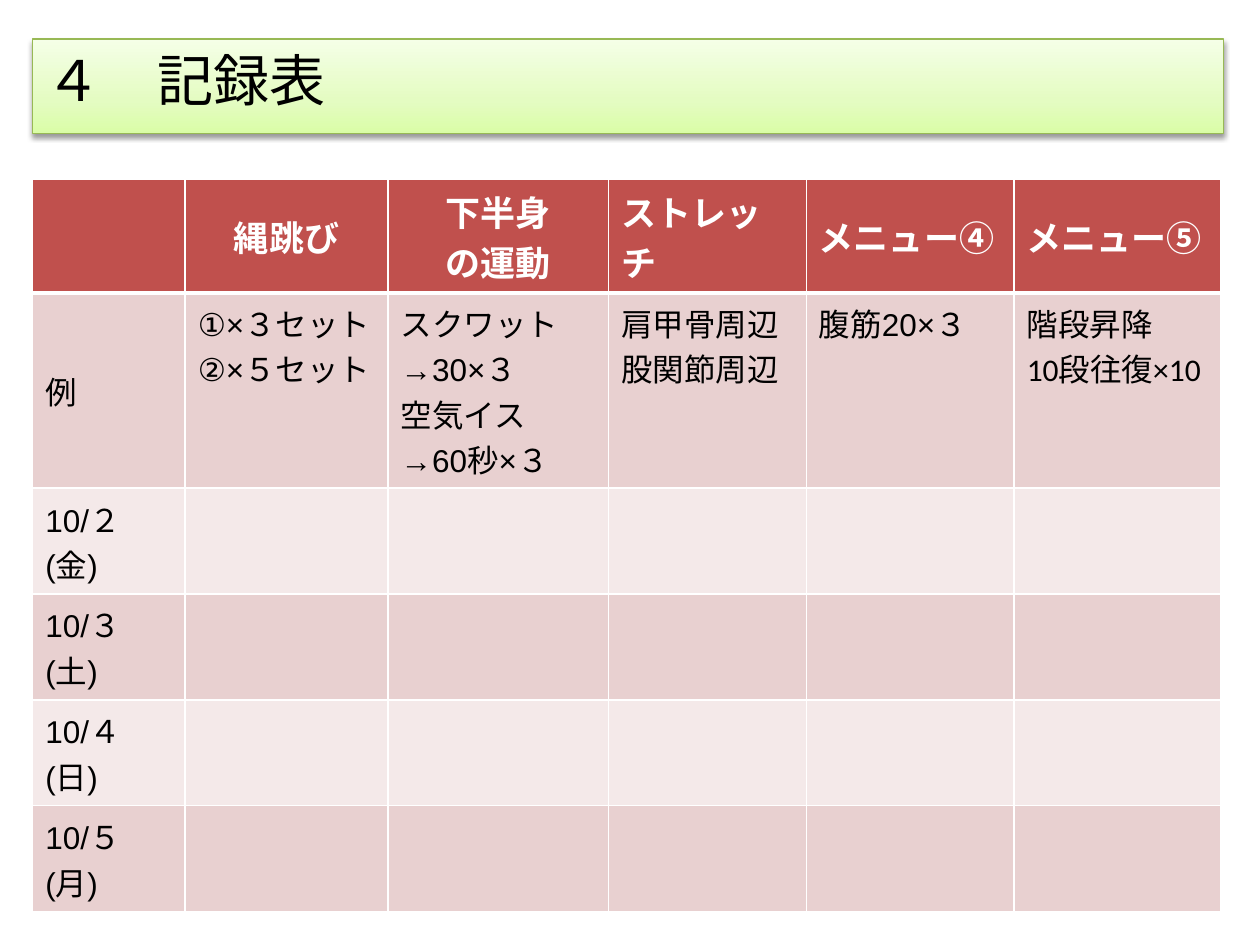
from lxml import etree
from pptx import Presentation
from pptx.dml.color import RGBColor
from pptx.enum.lang import MSO_LANGUAGE_ID
from pptx.enum.text import MSO_ANCHOR, MSO_AUTO_SIZE, PP_ALIGN
from pptx.oxml import parse_xml
from pptx.oxml.ns import nsdecls, qn
from pptx.util import Inches, Pt

JAPANESE = MSO_LANGUAGE_ID.JAPANESE
TOP, MIDDLE = MSO_ANCHOR.TOP, MSO_ANCHOR.MIDDLE
LEFT, CENTER = PP_ALIGN.LEFT, PP_ALIGN.CENTER
NO_AUTOFIT = MSO_AUTO_SIZE.NONE
rgb = RGBColor.from_string


def add_run(p, text, font, size, color, bold=False):
    r = p.add_run()
    r.text = text
    r.font.name, r.font.size, r.font.bold = font, Pt(size), bold
    r.font.color.rgb = rgb(color)
    r.font.language_id = JAPANESE
    return r


def add_border(cell, side, width):
    ln = etree.SubElement(cell._tc.get_or_add_tcPr(), qn("a:ln" + side), w=str(Pt(width)))
    fill = etree.SubElement(ln, qn("a:solidFill"))
    etree.SubElement(fill, qn("a:srgbClr"), val="FFFFFF")


prs = Presentation()
prs.slide_width, prs.slide_height = Inches(10), Inches(7.5)
s = prs.slides.add_slide(prs.slide_layouts[5])

# Title bar
title = s.shapes.title
title.left, title.top = Inches(0.26), Inches(0.31)
title.width, title.height = Inches(9.45), Inches(0.75)
title.line.color.rgb = rgb("98B955")
title.line.width = Pt(0.75)
tf = title.text_frame
tf.auto_size, tf.vertical_anchor, tf.word_wrap = NO_AUTOFIT, TOP, True
p = tf.paragraphs[0]
p.alignment = LEFT
r = add_run(p, "４\u3000記録表", "Noto Sans CJK JP", 32, "000000")
etree.SubElement(r.font._element, qn("a:ea"), typeface="Noto Sans CJK JP")

# Title gradient, running upwards, and soft shadow
stops = "".join(
    f'<a:gs pos="{pos * 1000}"><a:srgbClr val="{color}"/></a:gs>'
    for pos, color in [(0, "DAFDA7"), (35, "E4FCC2"), (100, "F5FFE7")])
ln = title.line._ln
ln.addprevious(parse_xml(
    f'<a:gradFill {nsdecls("a")} rotWithShape="1"><a:gsLst>{stops}</a:gsLst>'
    '<a:lin ang="16200000" scaled="0"/></a:gradFill>'))
ln.addnext(parse_xml(
    f'<a:effectLst {nsdecls("a")}><a:outerShdw blurRad="{Pt(3.1)}" dist="{Pt(1.6)}"'
    ' dir="5400000" rotWithShape="0"><a:srgbClr val="000000"><a:alpha val="38000"/>'
    '</a:srgbClr></a:outerShdw></a:effectLst>'))

# Record table: each cell is a list of paragraphs
headers = [[], ["縄跳び"], ["下半身", "の運動"], ["ストレッチ"], ["メニュー④"], ["メニュー⑤"]]
example = [["例"], ["①×３セット", "②×５セット"],
           ["スクワット", "→30×３", "空気イス", "→60秒×３"],
           ["肩甲骨周辺", "股関節周辺"], ["腹筋20×３"], ["階段昇降", "10段往復×10"]]
days = ["10/２(金)", "10/３(土)", "10/４(日)", "10/５(月)"]
rows = [headers, example] + [[[day]] + [[]] * 5 for day in days]
col_widths = [1.21, 1.61, 1.75, 1.57, 1.65, 1.64]
row_heights = [0.84, 1.42] + [0.84] * len(days)

table = s.shapes.add_table(len(rows), len(col_widths), Inches(0.26), Inches(1.42),
                           Inches(9.45), Inches(5.64)).table
for col, width in zip(table.columns, col_widths):
    col.width = Inches(width)
for row, height in zip(table.rows, row_heights):
    row.height = Inches(height)

for i, row in enumerate(rows):
    header = i == 0
    for j, lines in enumerate(row):
        cell = table.cell(i, j)
        for side in "LRTB":
            thick = (i, side) in [(0, "B"), (1, "T")]
            add_border(cell, side, 3 if thick else 1)
        cell.fill.solid()
        cell.fill.fore_color.rgb = rgb("C0504D" if header else ("F4E9E9", "E8D0D0")[i % 2])
        cell.vertical_anchor = MIDDLE if header or j == 0 else TOP
        tf = cell.text_frame
        for n, line in enumerate(lines):
            p = tf.add_paragraph() if n else tf.paragraphs[0]
            p.alignment = CENTER if header and j in (1, 2) else LEFT
            if header:
                add_run(p, line, "Calibri", 20, "FFFFFF", bold=True)
            else:
                add_run(p, line, "Calibri" if j in (3, 5) else "Arial", 18, "000000")

prs.save("out.pptx")
